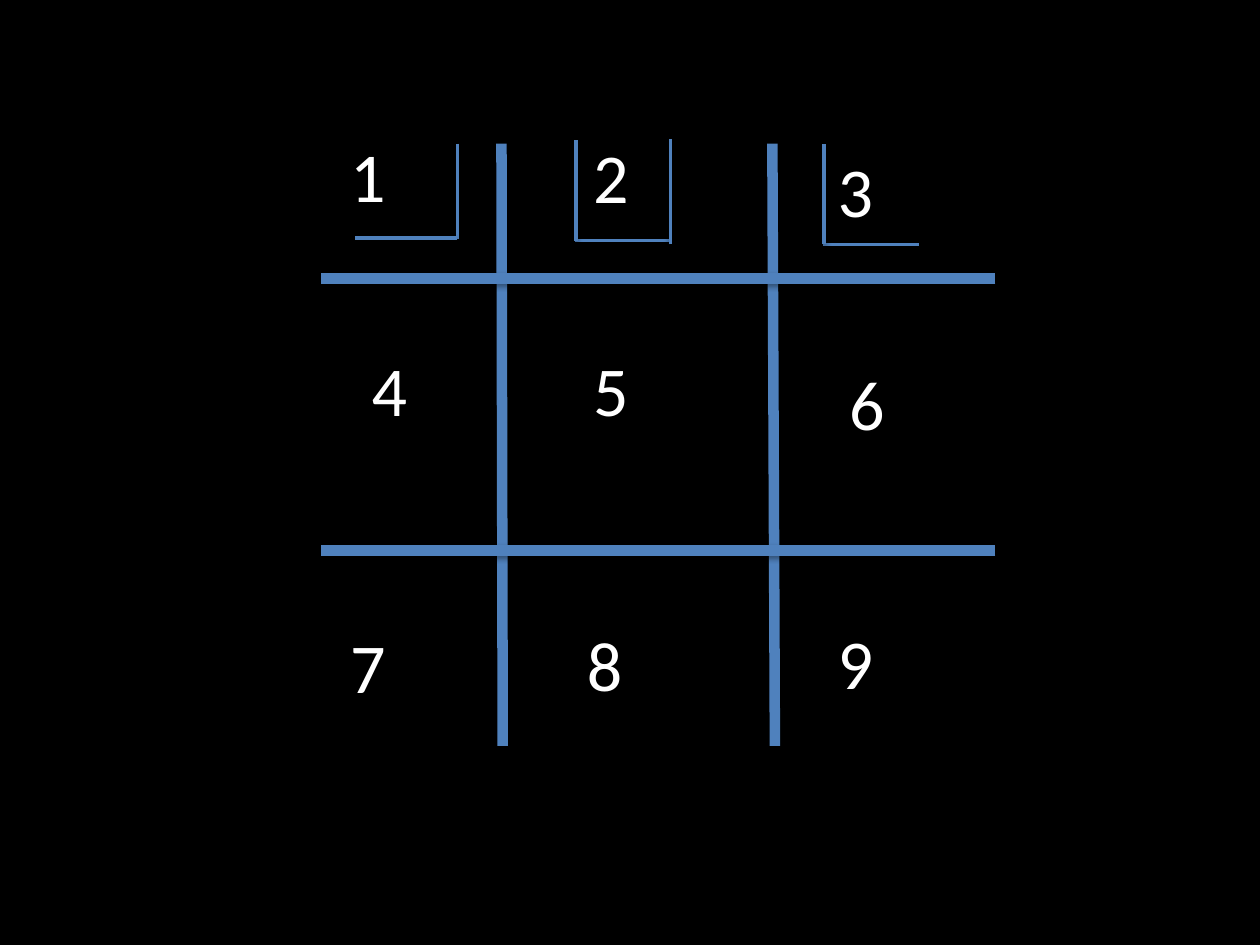
from lxml.etree import SubElement
from pptx import Presentation
from pptx.dml.color import RGBColor
from pptx.enum.shapes import MSO_CONNECTOR
from pptx.enum.text import MSO_AUTO_SIZE
from pptx.oxml.ns import qn
from pptx.util import Inches, Pt

COLORS = {"background": "000000", "line": "4F81BD", "text": "FFFFFF", "shadow": "000000"}


def write_text(text_frame, text, font="Calibri", size=40, color="text"):
    run = text_frame.paragraphs[0].add_run()
    run.text = text
    run.font.name = font
    run.font.size = Pt(size)
    run.font.color.rgb = RGBColor.from_string(COLORS[color])


class Board:
    """Holds the style and the slide that is being drawn."""

    digit_width, digit_height = 0.95, 0.77

    def __init__(self, slide):
        self.slide = slide
        fill = slide.background.fill
        fill.solid()
        fill.fore_color.rgb = RGBColor.from_string(COLORS["background"])

    def line(self, group, start, end, width):
        connector = group.shapes.add_connector(
            MSO_CONNECTOR.STRAIGHT, *(Inches(value) for value in (*start, *end)))
        connector.line.color.rgb = RGBColor.from_string(COLORS["line"])
        connector.line.width = Pt(width)
        self.shadow(connector)

    def shadow(self, connector):
        effects = SubElement(connector._element.spPr, qn("a:effectLst"))
        shadow = SubElement(effects, qn("a:outerShdw"), blurRad=str(Pt(3.1)),
                            dist=str(Pt(1.6)), dir="5400000", rotWithShape="0")
        color = SubElement(shadow, qn("a:srgbClr"), val=COLORS["shadow"])
        SubElement(color, qn("a:alpha"), val="38000")

    def line_group(self, lines, width):
        group = self.slide.shapes.add_group_shape()
        for start, end in lines:
            self.line(group, start, end, width)

    def digit(self, text, left, top):
        box = self.slide.shapes.add_textbox(
            Inches(left), Inches(top), Inches(self.digit_width), Inches(self.digit_height))
        box.text_frame.word_wrap = True
        box.text_frame.auto_size = MSO_AUTO_SIZE.SHAPE_TO_FIT_TEXT
        write_text(box.text_frame, text)


def main():
    presentation = Presentation()
    presentation.slide_width, presentation.slide_height = Inches(10), Inches(7.5)
    board = Board(presentation.slides.add_slide(presentation.slide_layouts[6]))

    # Main grid: two uprights, then two crossbars
    uprights = [((top_x, 1.14), (bottom_x, 5.92))
                for top_x, bottom_x in ((3.98, 3.99), (6.13, 6.15))]
    crossbars = [((7.9, y), (2.55, y)) for y in (2.21, 4.37)]
    board.line_group(uprights + crossbars, width=6)

    # Digits, numbered row by row
    positions = [
        (2.68, 1), (4.61, 1.01), (6.55, 1.12),
        (2.85, 2.7), (4.61, 2.7), (6.64, 2.81),
        (2.68, 4.9), (4.56, 4.88), (6.55, 4.87),
    ]
    for number, (left, top) in enumerate(positions, start=1):
        board.digit(str(number), left, top)

    # Cell outlines around 1, 3 and 2
    outlines = [
        [((3.63, 1.14), (3.63, 1.9)), ((3.63, 1.89), (2.82, 1.89))],
        [((7.29, 1.94), (6.53, 1.94)), ((6.54, 1.94), (6.54, 1.14))],
        [((5.32, 1.91), (4.56, 1.91)), ((4.57, 1.91), (4.57, 1.11)),
         ((5.32, 1.94), (5.32, 1.1))],
    ]
    for outline in outlines:
        board.line_group(outline, width=2)

    presentation.save("out.pptx")


if __name__ == "__main__":
    main()
